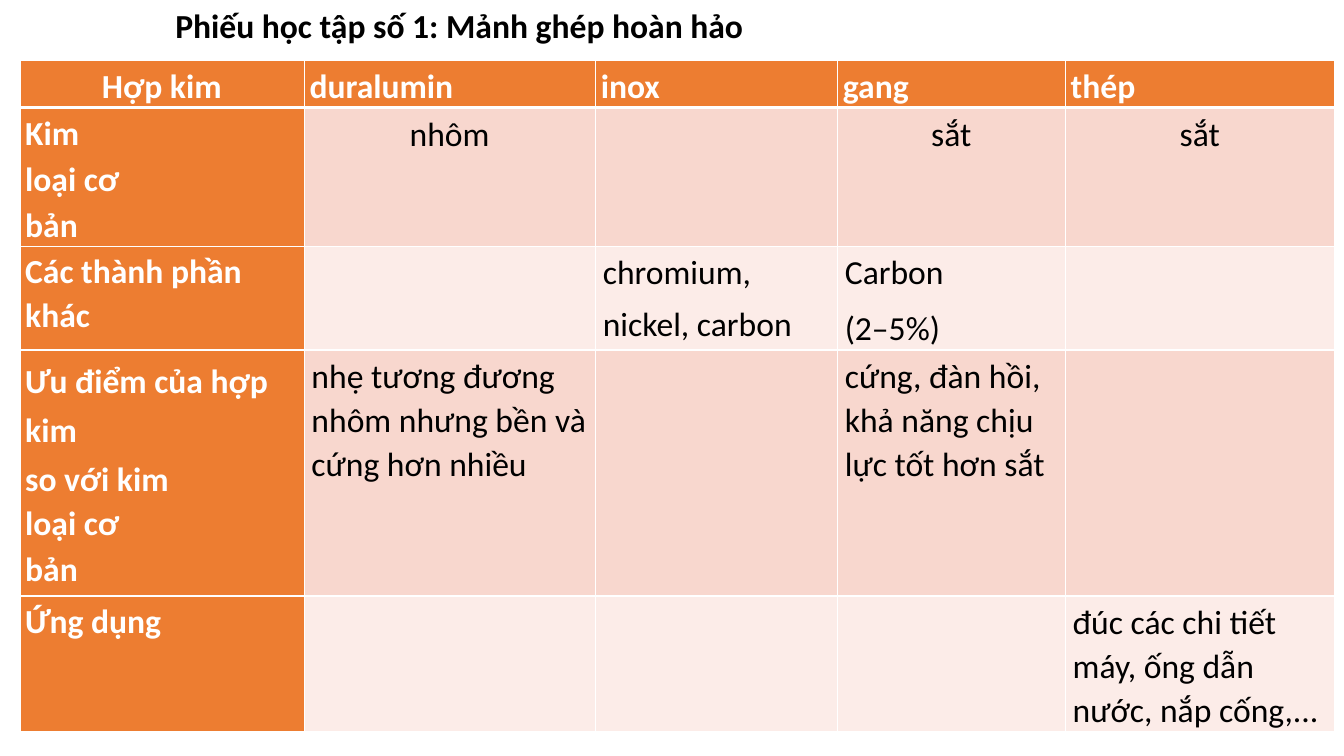
from dataclasses import dataclass
from typing import Optional

from lxml.etree import SubElement
from pptx import Presentation
from pptx.dml.color import RGBColor
from pptx.enum.text import MSO_ANCHOR, PP_ALIGN
from pptx.oxml.ns import qn
from pptx.util import Emu, Inches, Pt

CELL = Inches(0.01)  # side of one square of the slide grid
SLIDE_COLUMNS, SLIDE_ROWS = 1333, 750


@dataclass(frozen=True)
class Theme:
    font: str = "Calibri"
    size: int = 24
    accent: str = "ED7D31"
    bands: tuple[str, str] = ("F8D7CE", "FCECE8")
    dark: str = "000000"
    light: str = "FFFFFF"
    border: int = 1
    header_border: int = 3


@dataclass(frozen=True)
class Line:
    text: str
    spacing: float = 1.07
    after: float = 0


@dataclass(frozen=True)
class TableRow:
    height: int
    label: tuple[Line, ...]
    answers: tuple[tuple[Line, ...], ...]
    centred: bool = False


THEME = Theme()
TABLE_LEFT, TABLE_TOP = 20, 60
COLUMN_WIDTHS = (282, 289, 240, 226, 267)
HEADER_HEIGHT = 46
HEADERS = ("Hợp kim", "duralumin", "inox", "gang", "thép")
LABEL_MARGINS = (5, 3, 6, 0)
ANSWER_MARGINS = (7, 4, 8, 0)


def answer(*texts: str) -> tuple[Line, ...]:
    return tuple(Line(text, after=8) for text in texts)


ROWS = (
    TableRow(137,
             (Line("Kim", after=1.5), Line("loại cơ", after=1.5), Line("bản")),
             (answer("nhôm"), (), answer("sắt"), answer("sắt")), centred=True),
    TableRow(103,
             (Line("Các thành phần khác"),),
             ((), (Line("chromium,", after=1.5), Line("nickel, carbon", spacing=1.2)),
              answer("Carbon", "(2–5%)"), ())),
    TableRow(244,
             (Line("Ưu điểm của hợp kim", spacing=1.2), Line("so với kim", spacing=1.2),
              Line("loại cơ", after=1.5), Line("bản")),
             (answer("nhẹ tương đương nhôm nhưng bền và cứng hơn nhiều"), (),
              answer("cứng, đàn hồi, khả năng chịu lực tốt hơn sắt"), ())),
    TableRow(133,
             (Line("Ứng dụng"),),
             ((), (), (), answer("đúc các chi tiết máy, ống dẫn nước, nắp cống,..."))),
)


def grid(count: int) -> Emu:
    return Emu(count * CELL)


def write_lines(text_frame, lines: tuple[Line, ...], *, color: str, bold: bool = False,
                align: PP_ALIGN = PP_ALIGN.LEFT) -> None:
    for index, line in enumerate(lines):
        paragraph = text_frame.paragraphs[0] if index == 0 else text_frame.add_paragraph()
        paragraph.alignment = align
        paragraph.line_spacing = line.spacing
        paragraph.space_after = Pt(line.after)
        run = paragraph.add_run()
        run.text = line.text
        run.font.name = THEME.font
        run.font.size = Pt(THEME.size)
        run.font.bold = bold
        run.font.color.rgb = RGBColor.from_string(color)


def format_cell(cell, fill: str, margins: tuple[int, ...], top: int, bottom: int) -> None:
    """Set margins, borders (widths in points) and fill; borders precede the fill in XML."""
    cell.margin_left, cell.margin_top, cell.margin_right, cell.margin_bottom = map(grid, margins)
    properties = cell._tc.get_or_add_tcPr()
    widths = {"a:lnL": THEME.border, "a:lnR": THEME.border, "a:lnT": top, "a:lnB": bottom}
    for tag, width in widths.items():
        border = SubElement(properties, qn(tag), w=str(Pt(width)))
        SubElement(SubElement(border, qn("a:solidFill")), qn("a:srgbClr"), val=THEME.light)
    cell.fill.solid()
    cell.fill.fore_color.rgb = RGBColor.from_string(fill)


def fill_header(table) -> None:
    for column, text in enumerate(HEADERS):
        cell = table.cell(0, column)
        format_cell(cell, THEME.accent, LABEL_MARGINS, THEME.border, THEME.header_border)
        cell.vertical_anchor = MSO_ANCHOR.MIDDLE if column else MSO_ANCHOR.TOP
        write_lines(cell.text_frame, (Line(text),), color=THEME.light, bold=True,
                    align=PP_ALIGN.LEFT if column else PP_ALIGN.CENTER)


def fill_row(table, number: int, row: TableRow) -> None:
    top = THEME.header_border if number == 1 else THEME.border
    label = table.cell(number, 0)
    format_cell(label, THEME.accent, LABEL_MARGINS, top, THEME.border)
    write_lines(label.text_frame, row.label, color=THEME.light, bold=True)
    for column, lines in enumerate(row.answers, start=1):
        cell = table.cell(number, column)
        format_cell(cell, THEME.bands[(number - 1) % 2], ANSWER_MARGINS, top, THEME.border)
        write_lines(cell.text_frame, lines, color=THEME.dark,
                    align=PP_ALIGN.CENTER if row.centred else PP_ALIGN.LEFT)


def add_alloy_table(slide) -> None:
    heights = (HEADER_HEIGHT, *(row.height for row in ROWS))
    table = slide.shapes.add_table(
        len(heights), len(COLUMN_WIDTHS), grid(TABLE_LEFT), grid(TABLE_TOP),
        grid(sum(COLUMN_WIDTHS)), grid(sum(heights))).table
    for column, width in zip(table.columns, COLUMN_WIDTHS):
        column.width = grid(width)
    for table_row, height in zip(table.rows, heights):
        table_row.height = grid(height)
    fill_header(table)
    for number, row in enumerate(ROWS, start=1):
        fill_row(table, number, row)


def add_title(slide) -> None:
    text_frame = slide.shapes.add_textbox(grid(164), grid(0), grid(630), grid(50)).text_frame
    text_frame.word_wrap = True
    write_lines(text_frame, (Line("Phiếu học tập số 1: Mảnh ghép hoàn hảo", spacing=1.0),),
                color=THEME.dark, bold=True)


def main() -> None:
    presentation = Presentation()
    presentation.slide_width = grid(SLIDE_COLUMNS)
    presentation.slide_height = grid(SLIDE_ROWS)
    slide = presentation.slides.add_slide(presentation.slide_layouts[6])
    add_alloy_table(slide)
    add_title(slide)
    presentation.save("out.pptx")


if __name__ == "__main__":
    main()
